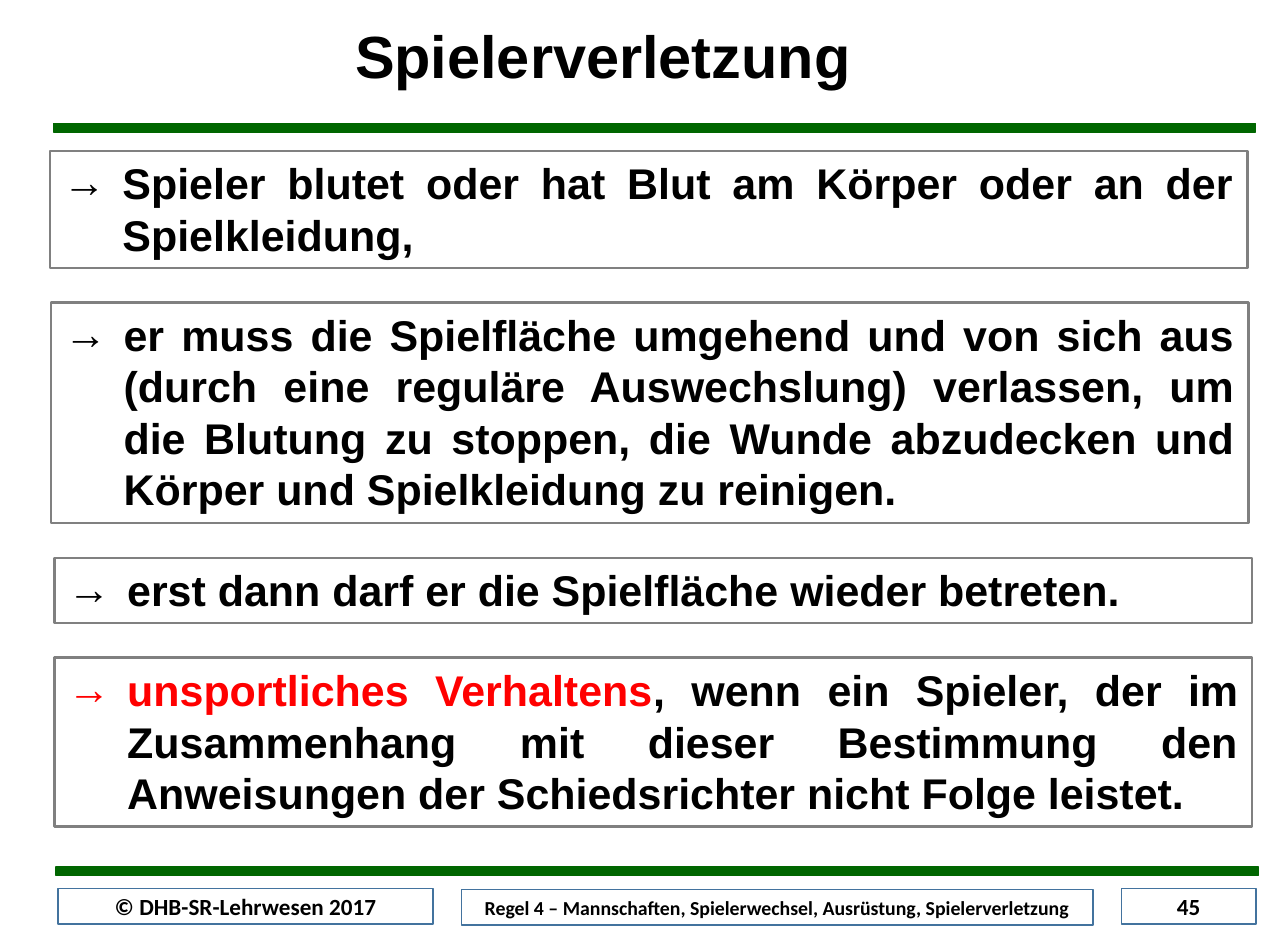
from lxml import etree
from pptx import Presentation, util as u
from pptx.dml.color import RGBColor
from pptx.enum import shapes, text
from pptx.oxml import ns

BLACK = RGBColor(0x00, 0x00, 0x00)
WHITE = RGBColor(0xFF, 0xFF, 0xFF)
RED = RGBColor(0xFF, 0x00, 0x00)
GREEN = RGBColor(0x00, 0x66, 0x00)
GRAY = RGBColor(0x80, 0x80, 0x80)
BLUE = RGBColor(0x43, 0x73, 0x9E)

WIDTH, HEIGHT = 10.83, 7.92
BAR_WIDTH, BAR_HEIGHT = 10.11, 0.07
BOX_WIDTH = 10.07
LINE_HEIGHT, BOX_PADDING, BOX_GAP = 0.435, 0.115, 0.29
HANGING = u.Inches(0.5)

presentation = Presentation()
presentation.slide_width = u.Inches(WIDTH)
presentation.slide_height = u.Inches(HEIGHT)
slide = presentation.slides.add_slide(presentation.slide_layouts[6])


def add_box(left, top, width, height, fill, line, line_width):
    shape = slide.shapes.add_shape(
        shapes.MSO_SHAPE.RECTANGLE,
        u.Inches(left), u.Inches(top), u.Inches(width), u.Inches(height))
    shape.shadow.inherit = False
    shape.fill.solid()
    shape.fill.fore_color.rgb = fill
    shape.line.color.rgb = line
    shape.line.width = u.Pt(line_width)
    shape.text_frame.word_wrap = True
    return shape


def set_font(paragraph, name, size):
    paragraph.font.name = name
    paragraph.font.size = u.Pt(size)
    paragraph.font.bold = True
    paragraph.font.color.rgb = BLACK


# Green bars below the title and above the footer
for left, top in [(0.45, 1.04), (0.47, 7.29)]:
    add_box(left, top, BAR_WIDTH, BAR_HEIGHT, GREEN, GREEN, 0.75)

# Footer
footer = [
    (0.49, 7.47, 3.15, 14, "© DHB-SR-Lehrwesen 2017"),
    (3.88, 7.48, 5.31, 12,
     "Regel 4 – Mannschaften, Spielerwechsel, Ausrüstung, Spielerverletzung"),
    (9.43, 7.47, 1.13, 14, "45"),
]
for left, top, width, size, label in footer:
    field = add_box(left, top, width, 0.3, WHITE, BLUE, 1)
    field.text_frame.vertical_anchor = text.MSO_ANCHOR.MIDDLE
    paragraph = field.text_frame.paragraphs[0]
    paragraph.alignment = text.PP_ALIGN.CENTER
    set_font(paragraph, "Calibri", size)
    run = paragraph.add_run()
    run.text = label
    run.font.color.rgb = BLACK

# Title
title = slide.shapes.add_textbox(
    u.Inches(2.19), u.Inches(0.18), u.Inches(5.76), u.Inches(0.68))
title.text_frame.word_wrap = True
paragraph = title.text_frame.paragraphs[0]
paragraph.text = "Spielerverletzung"
paragraph.alignment = text.PP_ALIGN.CENTER
paragraph.line_spacing = 0.9
set_font(paragraph, "Arial", 36)

# Rule boxes, stacked with equal gaps: left, line count, runs
rules = [
    (0.42, 2, [("Spieler blutet oder hat Blut am Körper oder an der "
                "Spielkleidung,", BLACK)]),
    (0.43, 4, [("er muss die Spielfläche umgehend und von sich aus (durch "
                "eine reguläre Auswechslung) verlassen, um die Blutung zu "
                "stoppen, die Wunde abzudecken und Körper und Spielkleidung "
                "zu reinigen.", BLACK)]),
    (0.46, 1, [("erst dann darf er die Spielfläche wieder betreten.\u00a0",
                BLACK)]),
    (0.46, 3, [("unsportliches Verhaltens", RED),
               (", wenn ein Spieler, der im Zusammenhang mit dieser "
                "Bestimmung den Anweisungen der Schiedsrichter nicht Folge "
                "leistet.", BLACK)]),
]
top = 1.27
for left, lines, runs in rules:
    height = lines * LINE_HEIGHT + BOX_PADDING
    box = add_box(left, top, BOX_WIDTH, height, WHITE, GRAY, 1.5)
    top += height + BOX_GAP
    frame = box.text_frame
    frame.margin_left = frame.margin_right = u.Inches(0.11)
    frame.vertical_anchor = text.MSO_ANCHOR.TOP
    paragraph = frame.paragraphs[0]
    paragraph.alignment = text.PP_ALIGN.JUSTIFY
    properties = paragraph._p.get_or_add_pPr()
    properties.set("marL", str(HANGING))
    properties.set("indent", str(-HANGING))
    etree.SubElement(properties, ns.qn("a:buFont")).set("typeface", "Arial")
    etree.SubElement(properties, ns.qn("a:buChar")).set("char", "→")
    set_font(paragraph, "Arial", 26)
    for words, color in runs:
        run = paragraph.add_run()
        run.text = words
        run.font.color.rgb = color

presentation.save("out.pptx")
